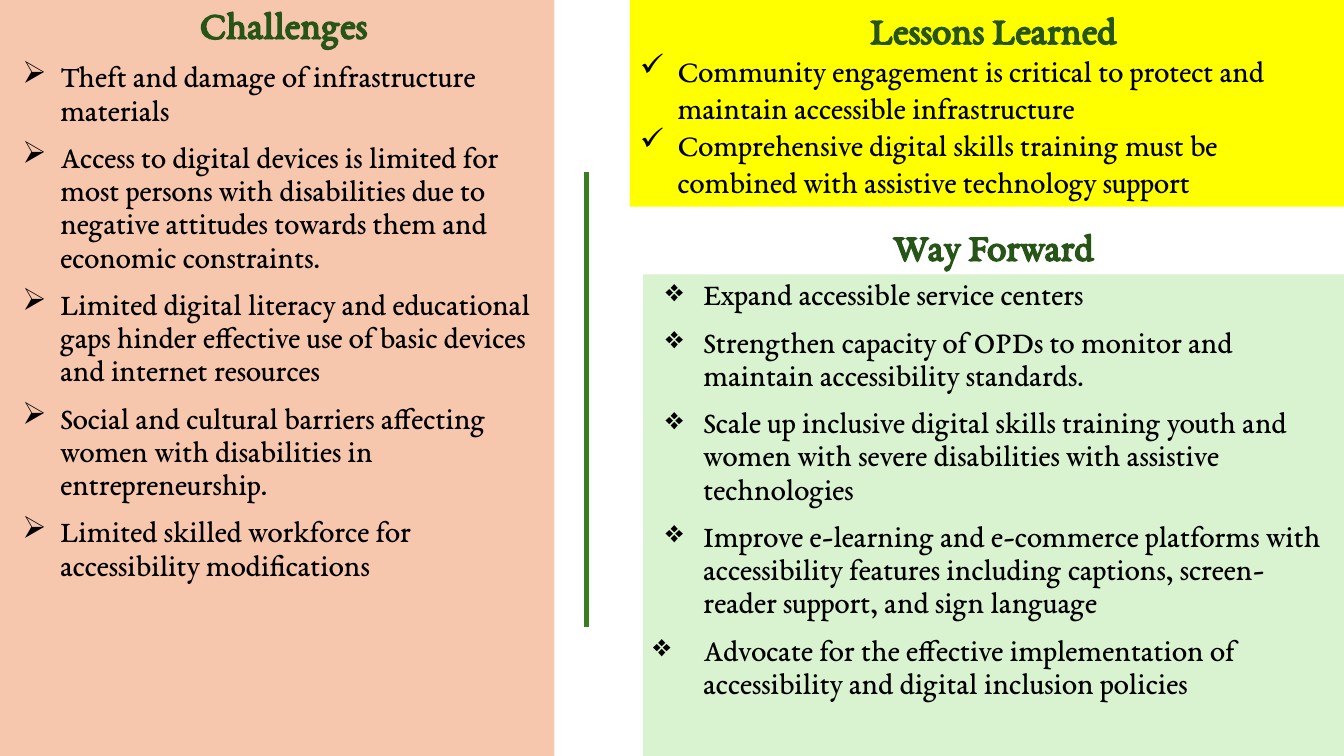
"""Build a slide of challenges, lessons learned and the way forward."""
from lxml import etree
from pptx import Presentation
from pptx.dml.color import RGBColor
from pptx.enum.shapes import MSO_CONNECTOR, MSO_SHAPE
from pptx.enum.text import MSO_ANCHOR, PP_ALIGN
from pptx.oxml.ns import qn
from pptx.util import Pt

RECTANGLE = MSO_SHAPE.RECTANGLE
STRAIGHT = MSO_CONNECTOR.STRAIGHT
TOP = MSO_ANCHOR.TOP
LEFT, CENTER = PP_ALIGN.LEFT, PP_ALIGN.CENTER

FONT = "EB Garamond"
COLORS = {
    "heading": "275417",
    "text": "000000",
    "challenges": "F6C6AD",
    "lessons": "FFFF00",
    "forward": "D9F2D0",
    "divider": "3B7D23",
}
CHALLENGES = [
    "Theft and damage of infrastructure materials",
    "Access to digital devices is limited for most persons with disabilities "
    "due to negative attitudes towards them and economic constraints.",
    "Limited digital literacy and educational gaps hinder effective use of "
    "basic devices and internet resources",
    "Social and cultural barriers affecting women with disabilities in "
    "entrepreneurship.",
    "Limited skilled workforce for accessibility modifications",
]
LESSONS = [
    "Community engagement is critical to protect and maintain accessible "
    "infrastructure",
    "Comprehensive digital skills training must be combined with assistive "
    "technology support",
]
FORWARD = [
    "Expand accessible service centers",
    "Strengthen capacity of OPDs to monitor and maintain accessibility "
    "standards.",
    "Scale up inclusive digital skills training youth and women with severe "
    "disabilities with assistive technologies",
    "Improve e-learning and e-commerce platforms with accessibility features "
    "including captions, screen-reader support, and sign language",
]
LAST_STEP = (
    "Advocate for the effective implementation of accessibility and digital "
    "inclusion policies"
)


def color(name):
    return RGBColor.from_string(COLORS[name])


def prepare_frame(shape):
    frame = shape.text_frame
    frame.word_wrap = True
    frame.vertical_anchor = TOP
    return frame


def add_panel(slide, left, top, width, height, fill):
    shape = slide.shapes.add_shape(
        RECTANGLE, Pt(left), Pt(top), Pt(width), Pt(height))
    shape.shadow.inherit = False
    shape.fill.solid()
    shape.fill.fore_color.rgb = color(fill)
    shape.line.fill.background()
    return prepare_frame(shape)


def add_paragraph(frame, text, margin, indent=0, spaced=False, bullet=None):
    is_first = not frame.paragraphs[0].text
    paragraph = frame.paragraphs[0] if is_first else frame.add_paragraph()
    paragraph.text = text
    paragraph.alignment = LEFT if bullet else CENTER
    if spaced:
        paragraph.line_spacing = 0.9
        paragraph.space_before = Pt(0 if is_first else 10)
    properties = paragraph._p.get_or_add_pPr()
    properties.set("marL", str(Pt(margin)))
    properties.set("indent", str(Pt(indent)))
    if bullet:
        bullet_color = etree.SubElement(properties, qn("a:buClr"))
        etree.SubElement(bullet_color, qn("a:srgbClr"), val=COLORS["text"])
        etree.SubElement(properties, qn("a:buChar"), char=bullet)
    font = paragraph.font
    font.name = FONT
    font.size = Pt(22 if bullet else 28)
    font.bold = not bullet
    font.color.rgb = color("text" if bullet else "heading")


def add_heading(frame, text, spaced=False):
    add_paragraph(frame, text, margin=9, spaced=spaced)


def add_bullets(frame, items, bullet, margin=36, indent=-27, spaced=True):
    for item in items:
        add_paragraph(frame, item, margin, indent, spaced, bullet)


def add_divider(slide, x, top, bottom):
    line = slide.shapes.add_connector(
        STRAIGHT, Pt(x), Pt(top), Pt(x), Pt(bottom))
    line.line.color.rgb = color("divider")
    line.line.width = Pt(3)
    etree.SubElement(line._element.spPr, qn("a:effectLst"))


def main():
    presentation = Presentation()
    presentation.slide_width = Pt(960)
    presentation.slide_height = Pt(540)
    slide = presentation.slides.add_slide(presentation.slide_layouts[6])

    challenges = add_panel(slide, 0, 0, 396, 540, "challenges")
    add_heading(challenges, "Challenges", spaced=True)
    add_bullets(challenges, CHALLENGES, "➢")

    lessons = add_panel(slide, 450, 0, 510, 147.6, "lessons")
    add_heading(lessons, "Lessons Learned")
    add_bullets(lessons, LESSONS, "✓", margin=27, spaced=False)

    forward = add_panel(slide, 459.4, 196, 500.6, 344, "forward")
    add_bullets(forward, FORWARD, "❖")
    add_bullets(forward, [LAST_STEP], "❖", indent=-36)

    title = slide.shapes.add_textbox(Pt(607.7), Pt(154.8), Pt(195), Pt(41.2))
    add_heading(prepare_frame(title), "Way Forward")

    add_divider(slide, 419, 123.1, 447.8)
    presentation.save("out.pptx")


if __name__ == "__main__":
    main()
